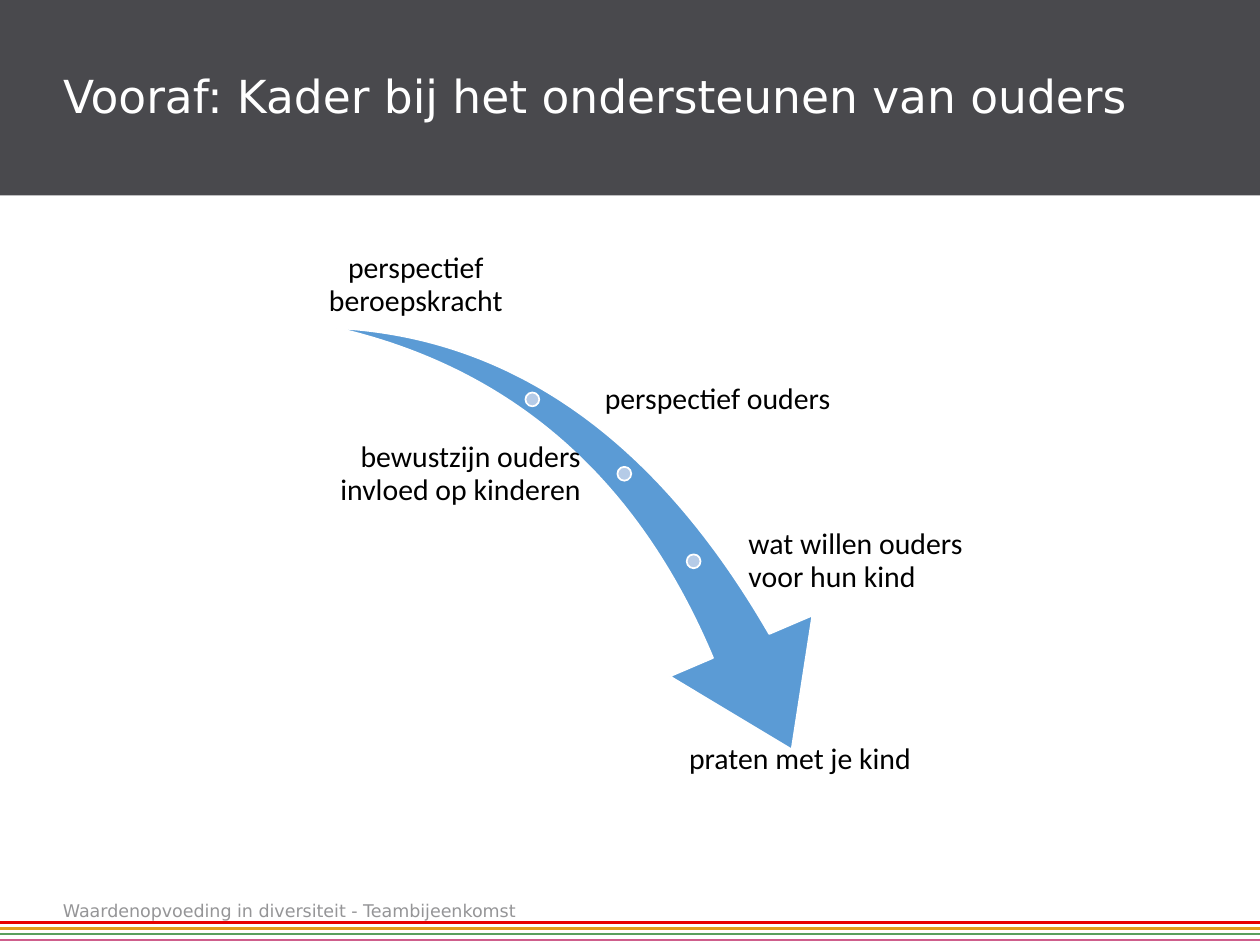
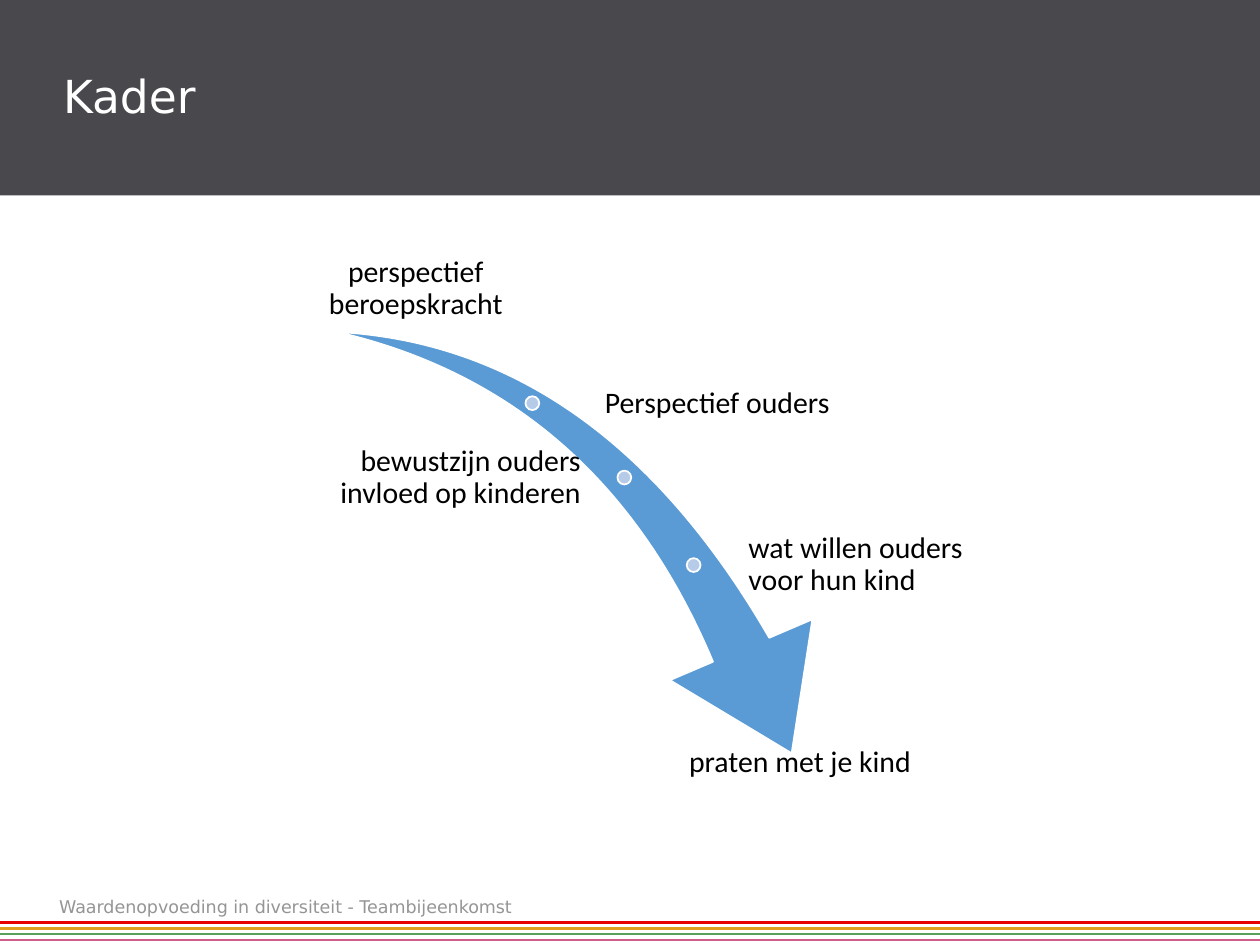
from lxml.etree import SubElement
from pptx import Presentation
from pptx.dml.color import RGBColor
from pptx.enum.shapes import MSO_CONNECTOR, MSO_SHAPE
from pptx.enum.text import MSO_ANCHOR, MSO_AUTO_SIZE, PP_ALIGN
from pptx.oxml.ns import qn
from pptx.util import Inches, Pt

COLS, ROWS = 100, 75
DARK, WHITE, BLACK, GREY = "49494D", "FFFFFF", "000000", "959597"
ARROW, DOT = "5B9BD5", "B5CBE7"
STRIPES = ["E80000", "E19D1E", "5AA05D", "CF5E8C"]

TITLE = {"name": "DejaVu Sans", "size": Pt(26), "bold": False}
FOOTER = {"name": "DejaVu Sans", "size": Pt(10)}
LABEL = {"name": "Calibri", "size": Pt(17)}


def rgb(value):
    return RGBColor.from_string(value)


def apply(target, values):
    for name, value in values.items():
        setattr(target, name, value)


class Deck:
    def __init__(self):
        self.prs = Presentation()
        apply(self.prs, {"slide_width": Inches(10), "slide_height": Inches(7.5)})
        self.col = self.prs.slide_width / COLS
        self.row = self.prs.slide_height / ROWS

    def box(self, x, y, w, h):
        return (round(x * self.col), round(y * self.row),
                round(w * self.col), round(h * self.row))

    def fill_text(self, sp, text, font, color, align=PP_ALIGN.LEFT,
                  anchor=MSO_ANCHOR.TOP, inset=0, spacing=1.0):
        tf = sp.text_frame
        apply(tf, {"word_wrap": True, "auto_size": MSO_AUTO_SIZE.NONE,
                   "vertical_anchor": anchor})
        apply(tf, {f"margin_{side}": Inches(inset)
                   for side in ("left", "right", "top", "bottom")})
        tf.text = text
        p = tf.paragraphs[0]
        apply(p, {"alignment": align, "line_spacing": spacing})
        r = p.runs[0]
        apply(r.font, font)
        r.font.color.rgb = rgb(color)

    def shape(self, shapes, kind, at, fill, line=None):
        sp = shapes.add_shape(kind, *self.box(*at))
        sp.shadow.inherit = False
        sp.fill.solid()
        sp.fill.fore_color.rgb = rgb(fill)
        if line:
            sp.line.color.rgb = rgb(line)
            sp.line.width = Pt(1)
        else:
            sp.line.fill.background()
        return sp

    def text(self, shapes, at, text, font, color, **layout):
        sp = shapes.add_textbox(*self.box(*at))
        self.fill_text(sp, text, font, color, **layout)

    def stripe(self, shapes, y, color):
        x, top, width, _ = self.box(0, y, COLS, 0)
        line = shapes.add_connector(MSO_CONNECTOR.STRAIGHT, x, top, width, top)
        line.line.color.rgb = rgb(color)
        line.line.width = Pt(1.5)
        SubElement(line.element.spPr, qn("a:effectLst"))

    def slide(self, title, footer_at):
        self.s = self.prs.slides.add_slide(self.prs.slide_layouts[5])
        # Title on its band
        sp = self.s.shapes.title
        apply(sp, dict(zip(("left", "top", "width", "height"),
                           self.box(5, 1.7, 90, 11.7))))
        self.fill_text(sp, title, TITLE, WHITE, anchor=MSO_ANCHOR.MIDDLE)
        band = self.shape(self.s.shapes, MSO_SHAPE.RECTANGLE,
                          (0, 0, COLS, 15.5), DARK)
        sp.element.addprevious(band.element)
        # Footer and stripes
        self.text(self.s.shapes, (*footer_at, 43.4, 2.4),
                  "Waardenopvoeding in diversiteit - Teambijeenkomst", FOOTER, GREY)
        stripes = self.s.shapes.add_group_shape().shapes
        for i, color in enumerate(STRIPES):
            self.stripe(stripes, 73.2 + 0.47 * i, color)

    def arrow_diagram(self, top, labels):
        shapes = self.s.shapes.add_group_shape().shapes
        # Curved arrow with its stops
        arrow = self.shape(shapes, MSO_SHAPE.SWOOSH_ARROW,
                           (25.8, top + 9.8, 42.4, 29.6), ARROW, WHITE)
        arrow.rotation = 73.3
        arrow.adjustments[0], arrow.adjustments[1] = 0.163, 0.314
        for x, y in [(41.7, 13.65), (49, 19.55), (54.5, 26.5)]:
            self.shape(shapes, MSO_SHAPE.OVAL, (x, top + y, 1.1, 1.1), DOT, WHITE)
        # Labels along the arrow
        places = [
            (23, 0, 20, PP_ALIGN.CENTER, MSO_ANCHOR.BOTTOM),
            (47.8, 10.3, 29.2, PP_ALIGN.LEFT, MSO_ANCHOR.MIDDLE),
            (23, 16.2, 23.3, PP_ALIGN.RIGHT, MSO_ANCHOR.MIDDLE),
            (59.2, 23.1, 17.8, PP_ALIGN.LEFT, MSO_ANCHOR.MIDDLE),
            (50, 41.3, 27, PP_ALIGN.CENTER, MSO_ANCHOR.TOP),
        ]
        for text, (x, y, w, align, anchor) in zip(labels, places):
            self.text(shapes, (x, top + y, w, 7.9), text, LABEL, BLACK,
                      align=align, anchor=anchor, inset=0.02, spacing=0.9)


def main():
    deck = Deck()
    slides = [
        ("Vooraf: Kader bij het ondersteunen van ouders", (5, 71.4), 17.5,
         "perspectief ouders"),
        ("Kader", (4.7, 71.1), 17.8, "Perspectief ouders"),
    ]
    for title, footer_at, top, parents in slides:
        deck.slide(title, footer_at)
        deck.arrow_diagram(top, [
            "perspectief beroepskracht",
            parents,
            "bewustzijn ouders invloed op kinderen",
            "wat willen ouders voor hun kind",
            "praten met je kind",
        ])
    deck.prs.save("out.pptx")


if __name__ == "__main__":
    main()
